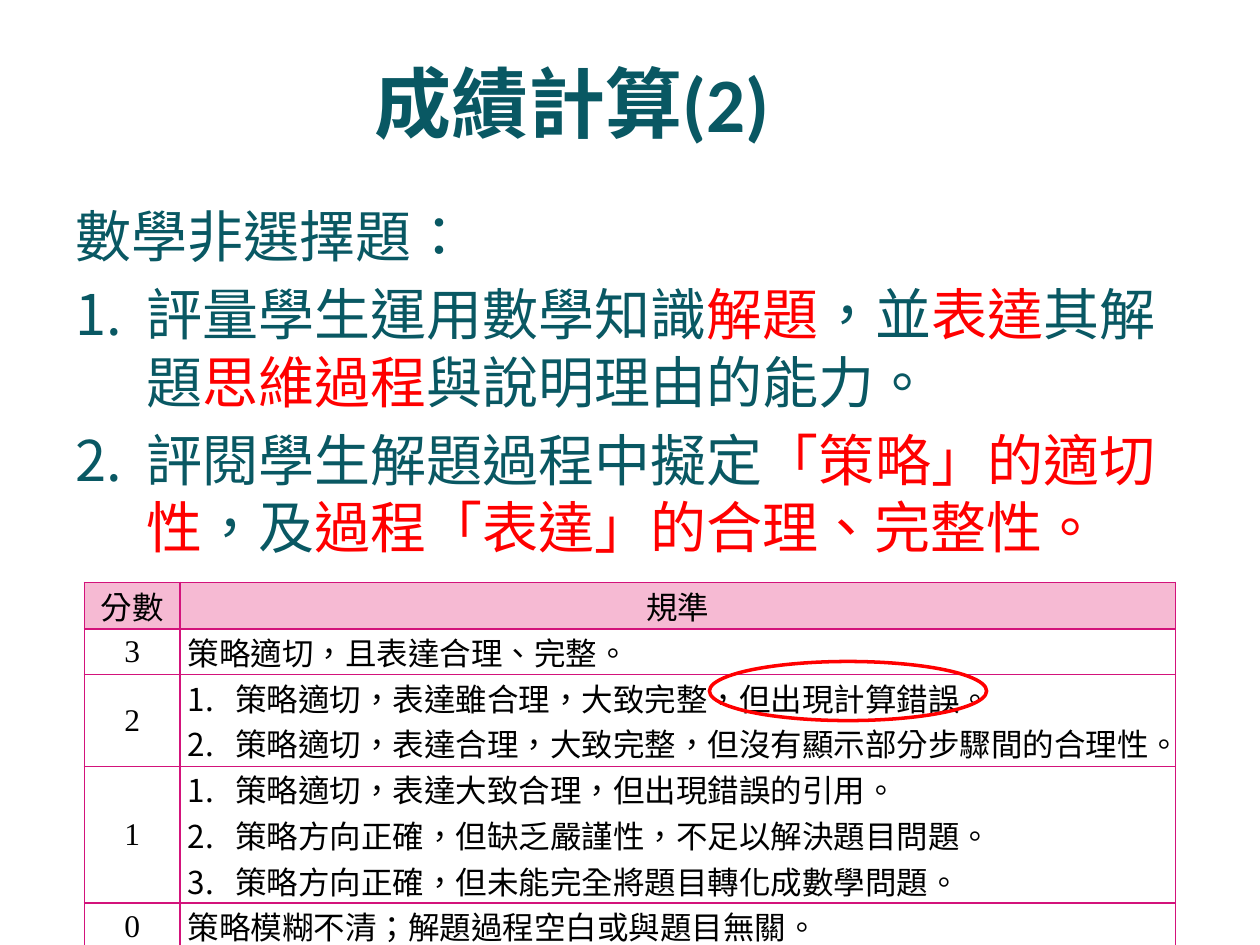
from typing import NamedTuple

from lxml import etree
from pptx import Presentation
from pptx.dml.color import RGBColor
from pptx.enum.shapes import MSO_SHAPE
from pptx.enum.text import MSO_ANCHOR, PP_ALIGN
from pptx.oxml.ns import qn
from pptx.util import Pt

CENTER, LEFT = PP_ALIGN.CENTER, PP_ALIGN.LEFT
MIDDLE, TOP = MSO_ANCHOR.MIDDLE, MSO_ANCHOR.TOP
ELLIPSE = MSO_SHAPE.OVAL
COLORS = {"teal": "095863", "red": "FF0000", "black": "000000",
          "header": "F6BAD3", "border": "D3137B"}


class Run(NamedTuple):
    text: str
    color: str = "teal"


class Row(NamedTuple):
    score: str
    criteria: list[str]
    height: float
    header: bool = False


BODY = [
    [Run("數學非選擇題：")],
    [Run("評量學生運用數學知識"), Run("解題", "red"), Run("，並"),
     Run("表達", "red"), Run("其解題"), Run("思維過程", "red"),
     Run("與說明理由的能力。")],
    [Run("評閱學生解題過程中擬定"), Run("「策略」的適切性", "red"),
     Run("，及"), Run("過程「表達」的合理、完整性。", "red")],
]
ROWS = [
    Row("分數", ["規準"], 26.6, True),
    Row("3", ["策略適切，且表達合理、完整。"], 26.2),
    Row("2", ["策略適切，表達雖合理，大致完整，但出現計算錯誤。",
              "策略適切，表達合理，大致完整，但沒有顯示部分步驟間的合理性。"], 52.4),
    Row("1", ["策略適切，表達大致合理，但出現錯誤的引用。",
              "策略方向正確，但缺乏嚴謹性，不足以解決題目問題。",
              "策略方向正確，但未能完全將題目轉化成數學問題。"], 78.2),
    Row("0", ["策略模糊不清；解題過程空白或與題目無關。"], 26.6),
]


def rgb(name: str) -> RGBColor:
    return RGBColor.from_string(COLORS[name])


def add_text(tf, runs: list[Run], *, size: float, font: str, first: bool = True,
             bold: bool = False, align=LEFT, indent: float = 0,
             before: float = 0) -> None:
    p = tf.paragraphs[0] if first else tf.add_paragraph()
    p.alignment = align
    p.space_before = Pt(0 if first else before)
    if indent:
        pPr = p._p.get_or_add_pPr()
        pPr.set("marL", str(Pt(indent)))
        pPr.set("indent", str(-Pt(indent)))
        etree.SubElement(pPr, qn("a:buFont"), typeface="+mj-lt")
        etree.SubElement(pPr, qn("a:buAutoNum"), type="arabicPeriod")
    for run in runs:
        r = p.add_run()
        r.text = run.text
        r.font.size = Pt(size)
        r.font.name = font
        r.font.bold = bold
        r.font.color.rgb = rgb(run.color)
        r._r.get_or_add_rPr().set("lang", "zh-TW")


def add_box(s, left: float, top: float, width: float, height: float, anchor):
    sp = s.shapes.add_textbox(Pt(left), Pt(top), Pt(width), Pt(height))
    tf = sp.text_frame
    tf.word_wrap = True
    tf.vertical_anchor = anchor
    return tf


def add_borders(cell) -> None:
    tcPr = cell._tc.get_or_add_tcPr()
    for i, side in enumerate(("lnL", "lnR", "lnT", "lnB")):
        ln = etree.Element(qn(f"a:{side}"), w=str(Pt(1)))
        fill = etree.SubElement(ln, qn("a:solidFill"))
        etree.SubElement(fill, qn("a:srgbClr"), val=COLORS["border"])
        tcPr.insert(i, ln)


def fill_cell(cell, lines: list[str], *, header: bool, centered: bool) -> None:
    cell.margin_left = cell.margin_right = Pt(4.5)
    cell.margin_top = cell.margin_bottom = 0
    cell.vertical_anchor = MIDDLE if centered else TOP
    if header:
        cell.fill.solid()
        cell.fill.fore_color.rgb = rgb("header")
    else:
        cell.fill.background()
    add_borders(cell)
    for i, line in enumerate(lines):
        add_text(cell.text_frame, [Run(line, "black")], size=18,
                 font="Times New Roman", first=i == 0,
                 align=CENTER if centered else LEFT,
                 indent=27 if len(lines) > 1 else 0)


def add_score_table(s, rows: list[Row]) -> None:
    height = sum(row.height for row in rows)
    table = s.shapes.add_table(len(rows), 2, Pt(48.2), Pt(332.8),
                               Pt(623.6), Pt(height)).table
    table.first_row = table.horz_banding = False
    for col, width in zip(table.columns, (54.7, 568.9)):
        col.width = Pt(width)
    for i, row in enumerate(rows):
        table.rows[i].height = Pt(row.height)
        fill_cell(table.cell(i, 0), [row.score], header=row.header, centered=True)
        fill_cell(table.cell(i, 1), row.criteria, header=row.header,
                  centered=row.header)


def main() -> None:
    prs = Presentation()
    prs.slide_width, prs.slide_height = Pt(720), Pt(540)
    s = prs.slides.add_slide(prs.slide_layouts[6])

    title = add_box(s, 36.7, 13, 580.3, 90, MIDDLE)
    add_text(title, [Run("成績計算(2)")], size=44, font="Calibri", bold=True,
             align=CENTER)

    body = add_box(s, 36, 111.6, 648, 215.3, TOP)
    for i, runs in enumerate(BODY):
        add_text(body, runs, size=32, font="Calibri", first=i == 0,
                 indent=40.5 if i else 0, before=6.4)

    add_score_table(s, ROWS)

    sp = s.shapes.add_shape(ELLIPSE, Pt(405.4), Pt(378), Pt(158.4), Pt(33.8))
    sp.shadow.inherit = False
    sp.fill.background()
    sp.line.color.rgb = rgb("red")
    sp.line.width = Pt(2)

    prs.save("out.pptx")


if __name__ == "__main__":
    main()
